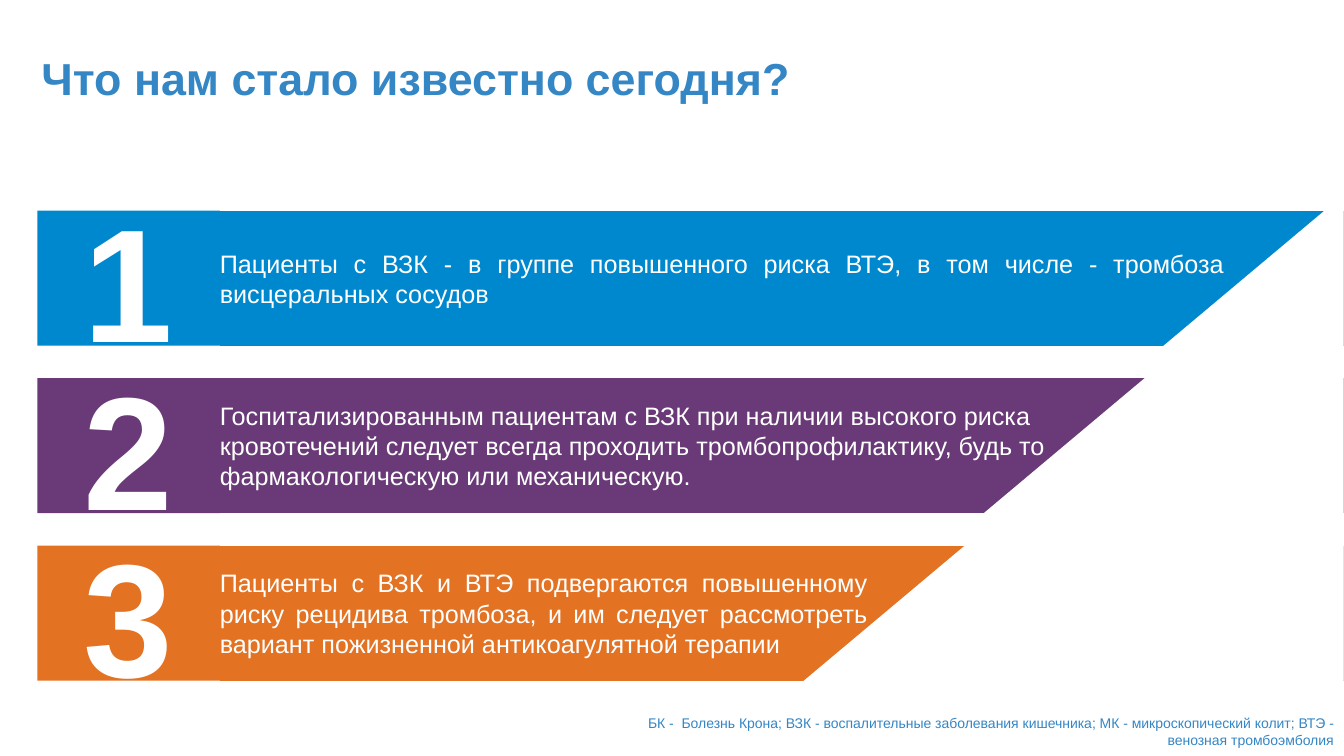
from dataclasses import dataclass

from lxml import etree
from pptx import Presentation
from pptx import util as u
from pptx.dml.color import RGBColor
from pptx.enum import shapes, text
from pptx.oxml import parse_xml
from pptx.oxml.ns import nsdecls, qn

FONT = "Arial"
WHITE = "FFFFFF"
HEADING_BLUE = "3486C5"
FIRST_TOP, PITCH, BAND_HEIGHT = 5.31, 4.22, 3.4
NUMBER_LEFT, NUMBER_WIDTH, MESSAGE_WIDTH = 0.94, 4.6, 28.32
SLANT_DEGREES = 50


@dataclass
class Finding:
    message: str
    color: str
    filled_percent: int
    right_inset: float
    align: text.PP_ALIGN


FINDINGS = [
    Finding("Пациенты с ВЗК - в группе повышенного риска ВТЭ, в том числе - тромбоза "
            "висцеральных сосудов",
            "0088CE", 86, 3.0, text.PP_ALIGN.JUSTIFY),
    Finding("Госпитализированным пациентам с ВЗК при наличии высокого риска кровотечений "
            "следует всегда проходить тромбопрофилактику, будь то фармакологическую "
            "или механическую.",
            "693A77", 72, 7.01, text.PP_ALIGN.LEFT),
    Finding("Пациенты с ВЗК и ВТЭ подвергаются повышенному риску рецидива тромбоза, "
            "и им следует рассмотреть вариант пожизненной антикоагулятной терапии",
            "E37222", 58, 11.99, text.PP_ALIGN.JUSTIFY),
]


def rgb(value: str) -> RGBColor:
    return RGBColor.from_string(value)


def write(shape, wording: str, *, size: float, color: str = WHITE, bold: bool = False,
          align=text.PP_ALIGN.LEFT, line_spacing: float = 1.0):
    frame = shape.text_frame
    frame.word_wrap = True
    frame.auto_size = text.MSO_AUTO_SIZE.NONE
    frame.vertical_anchor = text.MSO_ANCHOR.MIDDLE
    paragraph = frame.paragraphs[0]
    paragraph.alignment = align
    paragraph.line_spacing = line_spacing
    run = paragraph.add_run()
    run.text = wording
    run.font.name = FONT
    run.font.size = u.Pt(size)
    run.font.bold = bold
    run.font.color.rgb = rgb(color)
    return paragraph


def add_block(group, left: float, top: float, width: float, color: str):
    block = group.shapes.add_shape(shapes.MSO_SHAPE.RECTANGLE, u.Cm(left), u.Cm(top),
                                   u.Cm(width), u.Cm(BAND_HEIGHT))
    block.shadow.inherit = False
    block.fill.solid()
    block.fill.fore_color.rgb = rgb(color)
    block.line.fill.background()
    return block


def slant_fill(block, color: str, filled_percent: int) -> None:
    gradient = parse_xml(f'<a:gradFill {nsdecls("a")} rotWithShape="1"><a:gsLst/></a:gradFill>')
    stops = gradient.find(qn("a:gsLst"))
    for percent, stop_color in ((0, color), (filled_percent, color), (filled_percent, WHITE)):
        stop = etree.SubElement(stops, qn("a:gs"), pos=str(percent * 1000))
        etree.SubElement(stop, qn("a:srgbClr"), val=stop_color)
    etree.SubElement(gradient, qn("a:lin"), ang=str(SLANT_DEGREES * 60000), scaled="0")
    properties = block.element.spPr
    properties.replace(properties.find(qn("a:solidFill")), gradient)


def add_finding(slide, number: int, finding: Finding) -> None:
    top = FIRST_TOP + (number - 1) * PITCH
    group = slide.shapes.add_group_shape()

    message = add_block(group, NUMBER_LEFT + NUMBER_WIDTH, top, MESSAGE_WIDTH, finding.color)
    slant_fill(message, finding.color, finding.filled_percent)
    message.text_frame.margin_left = 0
    message.text_frame.margin_right = u.Cm(finding.right_inset)
    write(message, finding.message, size=18, align=finding.align)

    numeral = add_block(group, NUMBER_LEFT, top, NUMBER_WIDTH, finding.color)
    write(numeral, str(number), size=115, bold=True, align=text.PP_ALIGN.CENTER)


def add_heading(slide) -> None:
    heading = slide.shapes.title
    heading.left, heading.top = u.Cm(0.79), u.Cm(0.58)
    heading.width, heading.height = u.Cm(29.01), u.Cm(2.9)
    write(heading, "Что нам стало известно сегодня?", size=32, color=HEADING_BLUE,
          bold=True, line_spacing=0.9)


def add_abbreviations(slide) -> None:
    abbreviations = slide.shapes.add_textbox(u.Cm(14.99), u.Cm(17.81), u.Cm(18.87), u.Cm(1.24))
    paragraph = write(
        abbreviations,
        "БК -  Болезнь Крона; ВЗК - воспалительные заболевания кишечника; "
        "МК - микроскопический колит; ВТЭ - венозная тромбоэмболия",
        size=10, color=HEADING_BLUE, align=text.PP_ALIGN.RIGHT)
    indent = int(u.Cm(0.64))
    properties = paragraph._p.get_or_add_pPr()
    properties.set("marL", str(indent))
    properties.set("indent", str(-indent))


def main() -> None:
    presentation = Presentation()
    presentation.slide_width, presentation.slide_height = u.Cm(33.87), u.Cm(19.05)
    slide = presentation.slides.add_slide(presentation.slide_layouts.get_by_name("Title Only"))
    add_heading(slide)
    for number, finding in enumerate(FINDINGS, start=1):
        add_finding(slide, number, finding)
    add_abbreviations(slide)
    presentation.save("out.pptx")


if __name__ == "__main__":
    main()
